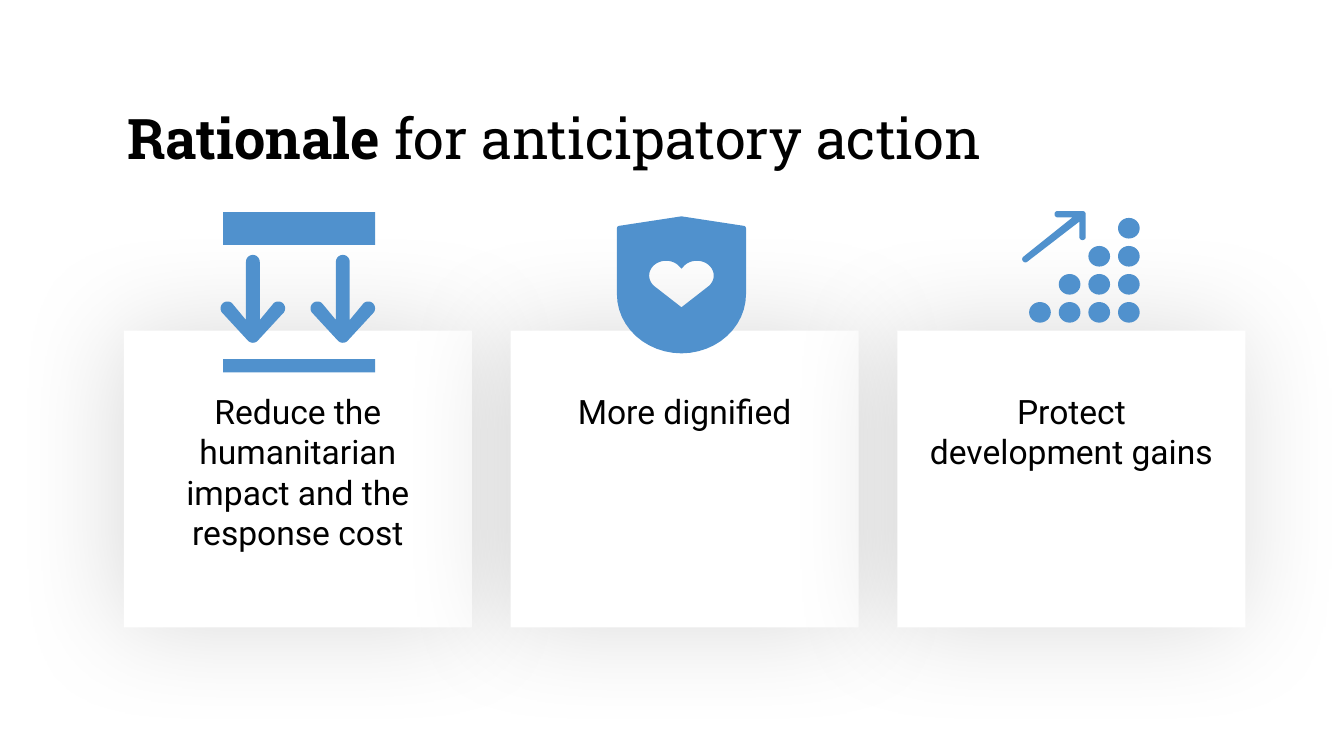
"""Build the slide on the rationale for anticipatory action."""
import math

from lxml import etree
from pptx import Presentation
from pptx import util as u
from pptx.dml.color import RGBColor
from pptx.enum import shapes, text
from pptx.oxml import ns

BLACK = RGBColor(0x00, 0x00, 0x00)
WHITE = RGBColor(0xFF, 0xFF, 0xFF)
BLUE = RGBColor(0x50, 0x91, 0xCD)


def write(frame, runs, *, font, size, align, insets, spacing=1.0):
    frame.word_wrap = True
    frame.auto_size = text.MSO_AUTO_SIZE.NONE
    frame.vertical_anchor = text.MSO_ANCHOR.TOP
    frame.margin_left, frame.margin_top, frame.margin_right, frame.margin_bottom = map(u.Cm, insets)
    paragraph = frame.paragraphs[0]
    paragraph.alignment = align
    paragraph.line_spacing = spacing
    for words, bold in runs:
        run = paragraph.add_run()
        run.text = words
        run.font.name = font
        run.font.size = u.Pt(size)
        run.font.bold = bold
        run.font.color.rgb = BLACK


def arc(x, y, rx, ry, start, end, steps=24):
    angles = [math.radians(start + (end - start) * i / steps) for i in range(steps + 1)]
    return [(x + rx * math.cos(a), y + ry * math.sin(a)) for a in angles]


prs = Presentation()
prs.slide_width = u.Cm(25.4)
prs.slide_height = u.Cm(14.29)
slide = prs.slides.add_slide(prs.slide_layouts[5])

title = slide.shapes.title
title.left, title.top, title.width, title.height = map(u.Cm, (2.26, 2.03, 20.02, 2.54))
write(title.text_frame, [("Rationale", True), (" for anticipatory action", False)],
      font="Roboto Slab", size=30, align=text.PP_ALIGN.LEFT,
      insets=(0.15, 0.08, 0.15, 0.08), spacing=0.9)

reasons = ["Reduce the humanitarian impact and the response cost",
           "More dignified", "Protect development gains"]
for i, reason in enumerate(reasons):
    card = slide.shapes.add_shape(shapes.MSO_SHAPE.RECTANGLE, u.Cm(2.34 + 7.31 * i),
                                  u.Cm(6.25), u.Cm(6.58), u.Cm(5.61))
    card.fill.solid()
    card.fill.fore_color.rgb = WHITE
    card.line.fill.background()
    card.shadow.inherit = False
    effects = card.element.spPr.find(ns.qn("a:effectLst"))
    shadow = etree.SubElement(effects, ns.qn("a:outerShdw"), blurRad=str(u.Pt(59)),
                              dist=str(u.Pt(3)), dir="10800000", algn="ctr", rotWithShape="0")
    shade = etree.SubElement(shadow, ns.qn("a:srgbClr"), val=str(BLACK))
    etree.SubElement(shade, ns.qn("a:alpha"), val="14000")
    write(card.text_frame, [(reason, False)], font="Roboto", size=18,
          align=text.PP_ALIGN.CENTER, insets=(0.58, 1.14, 0.58, 0.58))

icon_parts = []
for top, height in [(4.01, 0.62), (6.79, 0.25)]:
    icon_parts.append(slide.shapes.add_shape(
        shapes.MSO_SHAPE.RECTANGLE, u.Cm(4.22), u.Cm(top), u.Cm(2.87), u.Cm(height)))

for column in range(4):
    for level in range(column + 1):
        icon_parts.append(slide.shapes.add_shape(
            shapes.MSO_SHAPE.OVAL, u.Cm(19.45 + 0.56 * column),
            u.Cm(5.71 - 0.53 * level), u.Cm(0.41), u.Cm(0.39)))

outlines = []
for x in (4.78, 6.48):
    outlines.append([arc(x, 4.95, 0.13, 0.13, 180, 360)
                     + [(x + 0.13, 6.05)]
                     + arc(x + 0.48, 5.83, 0.13, 0.13, 225, 405)
                     + arc(x, 6.35, 0.13, 0.13, 45, 135)
                     + arc(x - 0.48, 5.83, 0.13, 0.13, 135, 315)
                     + [(x - 0.13, 6.05)]])

trend = (arc(19.99, 4.05, 0.06, 0.06, 90, 270)
         + arc(20.46, 4.05, 0.06, 0.06, 270, 360)
         + arc(20.46, 4.48, 0.06, 0.06, 0, 180)
         + [(20.4, 4.19)]
         + arc(19.38, 4.9, 0.06, 0.06, 52, 232)
         + [(20.27, 4.11)])
shield = ([(12.88, 4.09)]
          + arc(14.05, 4.32, 0.05, 0.05, 280, 360)
          + arc(12.88, 5.56, 1.22, 1.12, 0, 180)
          + arc(11.71, 4.32, 0.05, 0.05, 180, 260))
heart = ([(12.88, 5.08)]
         + arc(13.17, 5.21, 0.32, 0.28, 225, 405)
         + [(12.88, 5.81)]
         + arc(12.59, 5.21, 0.32, 0.28, 135, 315))
outlines += [[trend], [shield, heart]]

for contours in outlines:
    outer, *holes = [[(u.Cm(x), u.Cm(y)) for x, y in contour] for contour in contours]
    builder = slide.shapes.build_freeform(*outer[0])
    builder.add_line_segments(outer[1:])
    for hole in holes:
        builder.move_to(*hole[0])
        builder.add_line_segments(hole[1:])
    icon_parts.append(builder.convert_to_shape())

for part in icon_parts:
    part.fill.solid()
    part.fill.fore_color.rgb = BLUE
    part.line.fill.background()
    part.shadow.inherit = False

prs.save("out.pptx")
